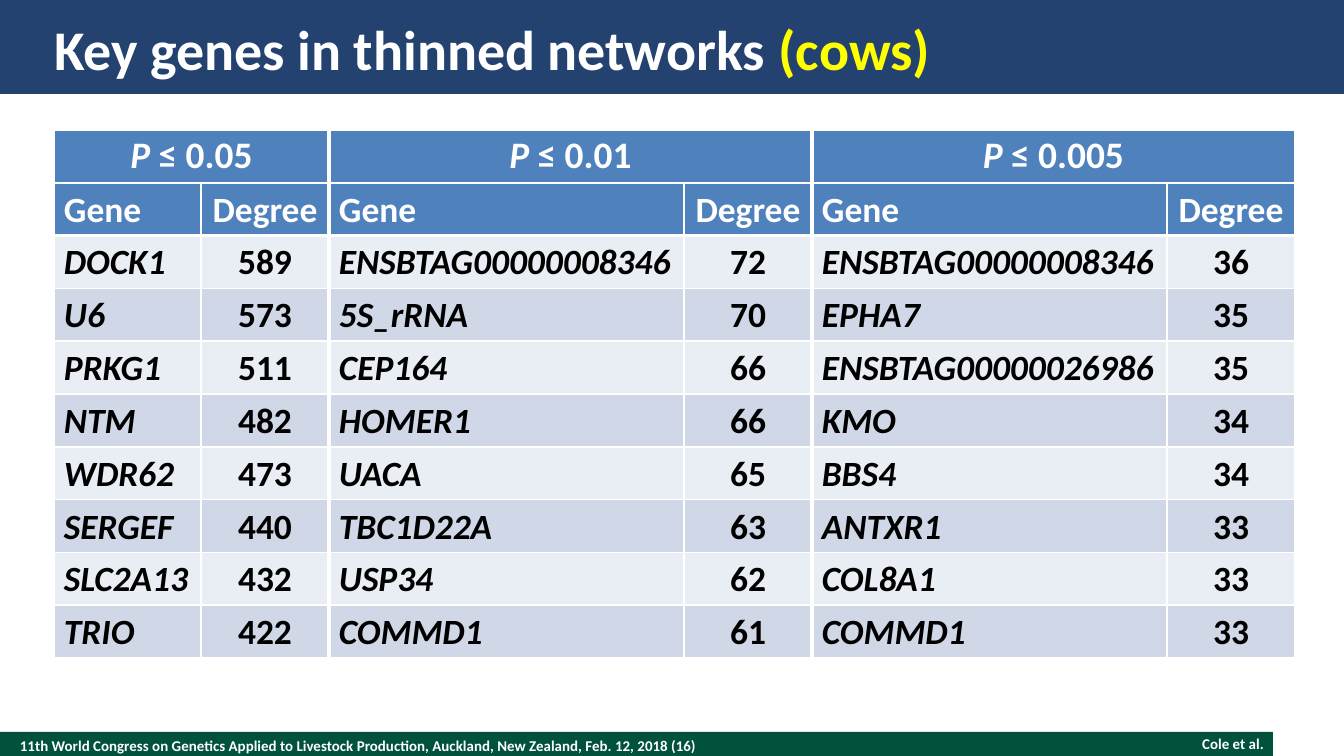
from lxml import etree
from pptx import Presentation
from pptx import util as u
from pptx.dml.color import RGBColor
from pptx.enum import shapes, text
from pptx.oxml.ns import qn

EMU_PER_PX = 914400 / 134.4
WIDTH, HEIGHT = 1344, 756
FONT = "Calibri"
WHITE, BLACK, YELLOW = "FFFFFF", "000000", "FFFF00"
NAVY, GREEN, BLUE = "244270", "00523C", "4F81BD"
BANDS = ["E9EDF4", "D0D8E8"]
LEFT, CENTER, RIGHT = text.PP_ALIGN.LEFT, text.PP_ALIGN.CENTER, text.PP_ALIGN.RIGHT

THRESHOLDS = ["≤ 0.05", "≤ 0.01", "≤ 0.005"]
COLUMN_WIDTHS = [147, 128, 355, 128, 355, 128]
GENES = [
    ["DOCK1", "589", "ENSBTAG00000008346", "72", "ENSBTAG00000008346", "36"],
    ["U6", "573", "5S_rRNA", "70", "EPHA7", "35"],
    ["PRKG1", "511", "CEP164", "66", "ENSBTAG00000026986", "35"],
    ["NTM", "482", "HOMER1", "66", "KMO", "34"],
    ["WDR62", "473", "UACA", "65", "BBS4", "34"],
    ["SERGEF", "440", "TBC1D22A", "63", "ANTXR1", "33"],
    ["SLC2A13", "432", "USP34", "62", "COL8A1", "33"],
    ["TRIO", "422", "COMMD1", "61", "COMMD1", "33"],
]


def px(length):
    return u.Emu(round(length * EMU_PER_PX))


def color(value):
    return RGBColor.from_string(value)


def set_font(font, size, value, italic=False):
    font.name, font.size, font.bold, font.italic = FONT, u.Pt(size), True, italic
    font.color.rgb = color(value)


def add_bar(slide, box, fill):
    bar = slide.shapes.add_shape(shapes.MSO_SHAPE.RECTANGLE, *map(px, box))
    bar.shadow.inherit = False
    bar.fill.solid()
    bar.fill.fore_color.rgb = color(fill)
    bar.line.fill.background()


def add_label(slide, box, content, size, align=LEFT):
    """Add one white line of text without margins and return its paragraph."""
    frame = slide.shapes.add_textbox(*map(px, box)).text_frame
    frame.margin_left = frame.margin_top = frame.margin_right = frame.margin_bottom = 0
    frame.word_wrap = True
    frame.vertical_anchor = text.MSO_ANCHOR.MIDDLE
    paragraph = frame.paragraphs[0]
    paragraph.add_run().text = content
    paragraph.alignment = align
    set_font(paragraph.font, size, WHITE)
    return paragraph


def add_header(slide, left, top, width, height):
    add_bar(slide, (left, top, width, height), NAVY)
    title = add_label(slide, (left + 54, top + 13, width - 108, height - 24),
                      "Key genes in thinned networks ", 30)
    highlight = title.add_run()
    highlight.text = "(cows)"
    highlight.font.color.rgb = color(YELLOW)


def add_footer(slide, left, top, width, height):
    add_bar(slide, (left, top, width, height), GREEN)
    add_label(slide, (left + 20, top, 874, height),
              "11th World Congress on Genetics Applied to Livestock Production, "
              "Auckland, New Zealand, Feb. 12, 2018 (16)", 8)
    add_label(slide, (left + width - 305, top + 3, 296, 18), "Cole et al.", 8, RIGHT)


def set_borders(cell, row, column, span):
    """Draw white edges, heavier between column groups and below the headings."""
    def vertical(edge):
        return 3 if edge in (2, 4) else 1

    def horizontal(edge):
        return 2.25 if edge == 2 else 1

    widths = {"a:lnL": vertical(column), "a:lnR": vertical(column + span),
              "a:lnT": horizontal(row), "a:lnB": horizontal(row + 1)}
    properties = cell._tc.get_or_add_tcPr()
    for tag, width in widths.items():
        line = etree.SubElement(properties, qn(tag), w=str(u.Pt(width)))
        fill = etree.SubElement(line, qn("a:solidFill"))
        etree.SubElement(fill, qn("a:srgbClr"), val=WHITE)


def fill_cell(table, row, column, runs, size, span=1):
    """Fill a cell with (text, italic) runs in the style of its row."""
    cell = table.cell(row, column)
    heading = row < 2
    if span > 1:
        cell.merge(table.cell(row, column + span - 1))
    set_borders(cell, row, column, span)
    cell.fill.solid()
    cell.fill.fore_color.rgb = color(BLUE if heading else BANDS[row % 2])
    cell.margin_left = cell.margin_right = px(10)
    cell.margin_top = cell.margin_bottom = px(4)
    cell.vertical_anchor = text.MSO_ANCHOR.BOTTOM if heading else text.MSO_ANCHOR.TOP
    paragraph = cell.text_frame.paragraphs[0]
    paragraph.alignment = CENTER if span > 1 or column % 2 else LEFT
    paragraph.line_spacing = u.Pt(24)
    for content, italic in runs:
        run = paragraph.add_run()
        run.text = content
        set_font(run.font, size, WHITE if heading else BLACK, italic)


def add_gene_table(slide, left, top, height):
    box = (left, top, sum(COLUMN_WIDTHS), height)
    table = slide.shapes.add_table(
        len(GENES) + 2, len(COLUMN_WIDTHS), *map(px, box)).table
    table.first_row = table.horz_banding = False
    for column, width in zip(table.columns, COLUMN_WIDTHS):
        column.width = px(width)
    for group, threshold in enumerate(THRESHOLDS):
        fill_cell(table, 0, 2 * group, [("P ", True), (threshold, False)], 20, span=2)
    rows = [["Gene", "Degree"] * len(THRESHOLDS)] + GENES
    for row, values in enumerate(rows, start=1):
        for column, value in enumerate(values):
            italic = row > 1 and column % 2 == 0
            fill_cell(table, row, column, [(value, italic)], 19)


def main():
    presentation = Presentation()
    presentation.slide_width, presentation.slide_height = px(WIDTH), px(HEIGHT)
    slide = presentation.slides.add_slide(presentation.slide_layouts[6])
    add_footer(slide, 0, 732, 1273, 27)
    add_header(slide, 0, 0, WIDTH, 94)
    add_gene_table(slide, 54, 130, 528)
    presentation.save("out.pptx")


if __name__ == "__main__":
    main()
